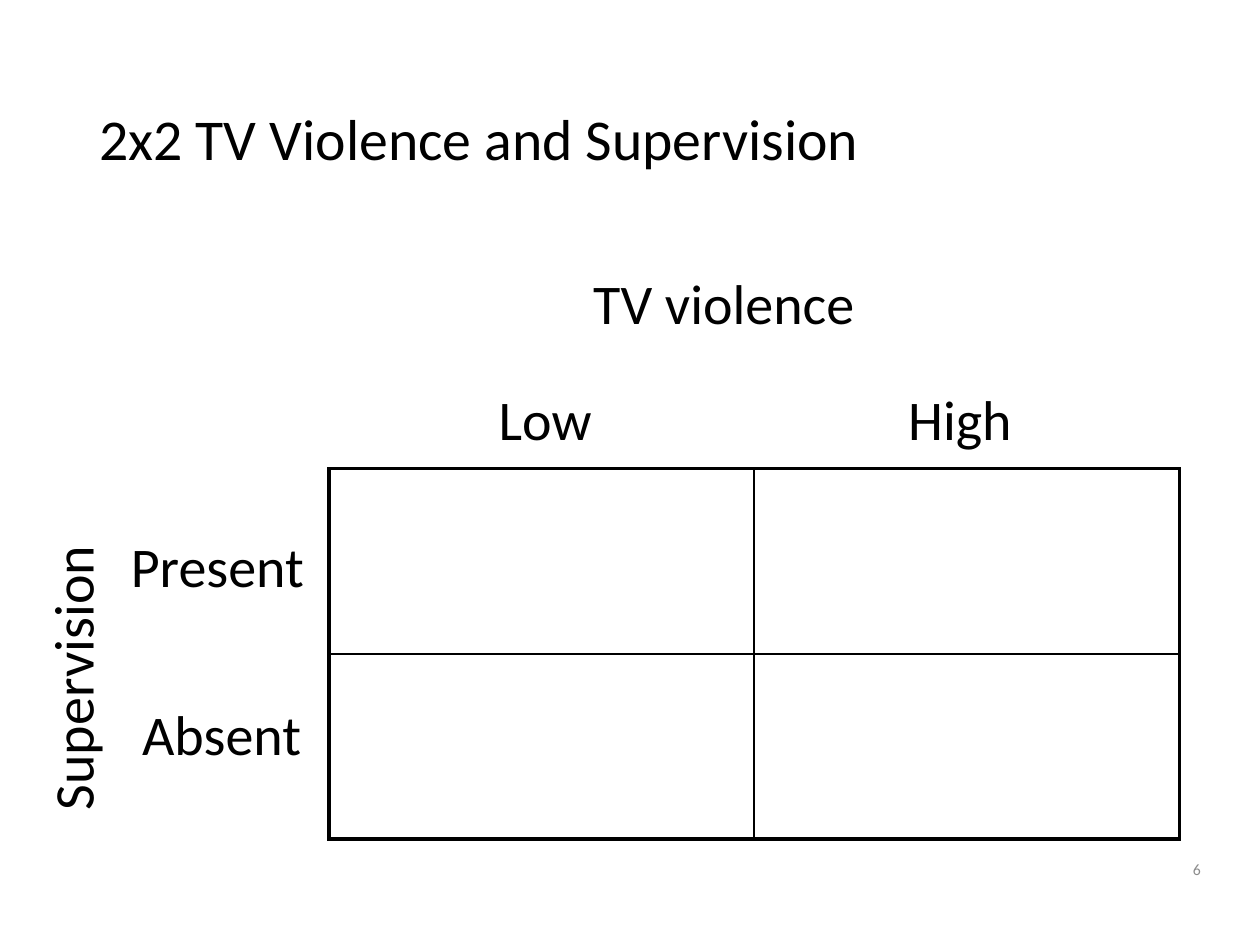
from lxml.etree import SubElement
from pptx import Presentation
from pptx.dml.color import RGBColor
from pptx.enum.text import MSO_ANCHOR as Anchor, PP_ALIGN as Align
from pptx.oxml.ns import qn
from pptx.util import Inches, Pt

COLORS = {"ink": "000000", "number": "8C8C8C"}
FONT = "Calibri"
TITLE = ("2x2 TV Violence and Supervision", 0.69, 0.4, 8.62, 1.45)
PAGE_NUMBER = ("6", 8.83, 6.75, 0.8, 0.3)
LABEL_HEIGHT = 0.63
LABELS = [
    ("TV violence", 4.61, 2.08, 3.75, 0),
    ("Low", 3.86, 3, 1.83, 0),
    ("High", 7.11, 3, 1.83, 0),
    ("Present", 0.94, 4.17, 2.17, 0),
    ("Absent", 1.03, 5.5, 2, 0),
    ("Supervision", -1.31, 4.34, 3.75, 270),
]
GRID = (2.61, 3.72, 6.75, 2.94)
GRID_SIZE = 2
OUTER, INNER = 2.25, 1


def add_text(page, text, left, top, width, height, size,
             color="ink", anchor=Anchor.TOP, align=Align.LEFT):
    box = page.shapes.add_textbox(*map(Inches, (left, top, width, height)))
    frame = box.text_frame
    frame.word_wrap = True
    frame.vertical_anchor = anchor
    para = frame.paragraphs[0]
    para.text = text
    para.alignment = align
    para.font.name = FONT
    para.font.size = Pt(size)
    para.font.color.rgb = RGBColor.from_string(COLORS[color])
    return box


def add_border(cell, side, weight):
    properties = cell._tc.get_or_add_tcPr()
    line = SubElement(properties, qn(f"a:ln{side}"), w=str(Pt(weight)))
    fill = SubElement(line, qn("a:solidFill"))
    SubElement(fill, qn("a:srgbClr"), val=COLORS["ink"])


def add_grid(page):
    shape = page.shapes.add_table(GRID_SIZE, GRID_SIZE, *map(Inches, GRID))
    table = shape.table
    table.first_row = table.horz_banding = False
    last = GRID_SIZE - 1
    for row in range(GRID_SIZE):
        for column in range(GRID_SIZE):
            cell = table.cell(row, column)
            edges = {"L": column == 0, "R": column == last,
                     "T": row == 0, "B": row == last}
            for side, is_outer in edges.items():
                add_border(cell, side, OUTER if is_outer else INNER)
            cell.fill.background()


def main():
    deck = Presentation()
    deck.slide_width, deck.slide_height = Inches(10), Inches(7.5)
    page = deck.slides.add_slide(deck.slide_layouts[6])
    title = add_text(page, *TITLE, size=33, anchor=Anchor.MIDDLE)
    title.text_frame.paragraphs[0].line_spacing = 0.9
    add_text(page, *PAGE_NUMBER, size=9, color="number",
             anchor=Anchor.MIDDLE, align=Align.RIGHT)
    add_grid(page)
    for text, left, top, width, rotation in LABELS:
        label = add_text(page, text, left, top, width, LABEL_HEIGHT, size=32)
        label.rotation = rotation
    deck.save("out.pptx")


if __name__ == "__main__":
    main()
